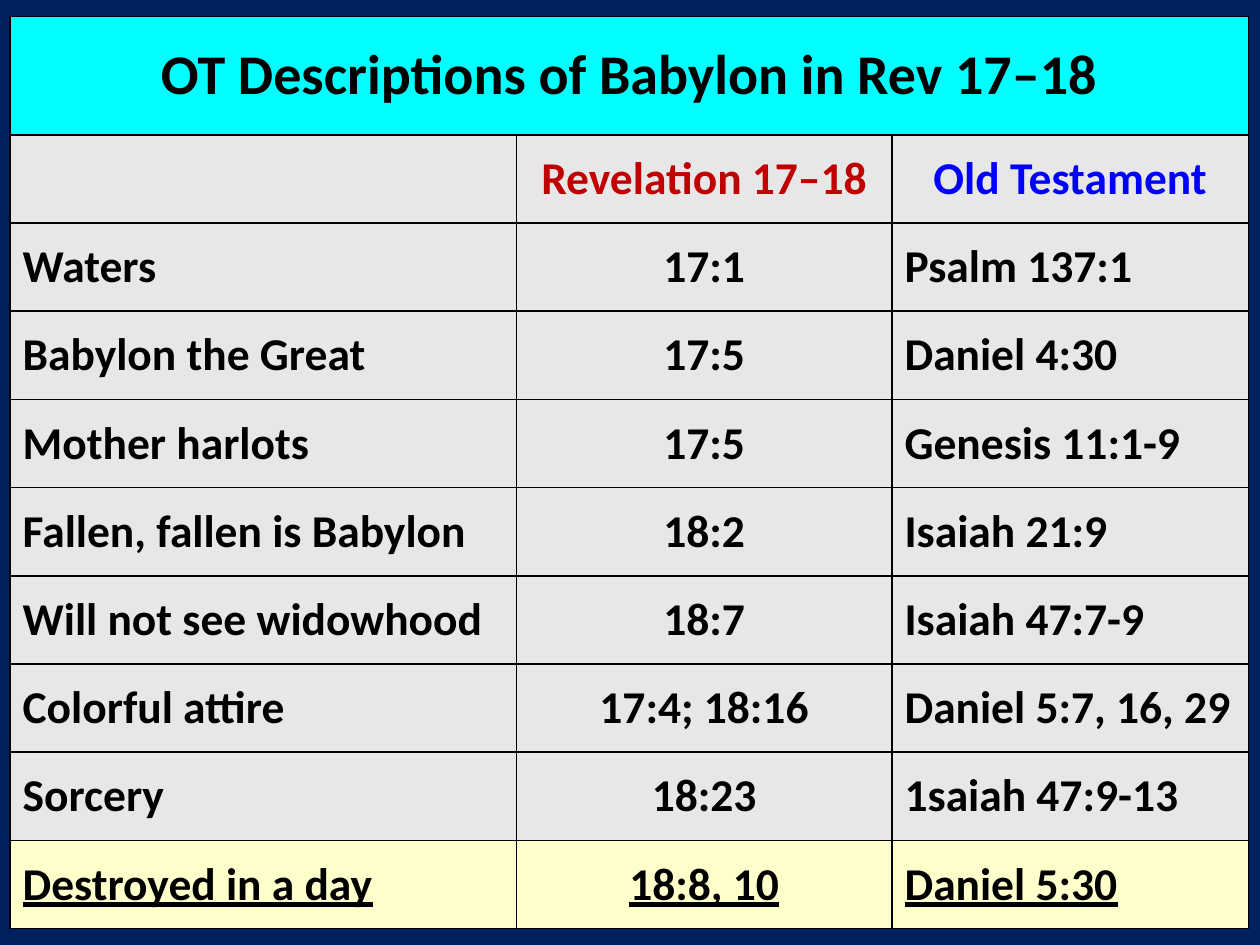
from lxml.etree import SubElement
from pptx import Presentation
from pptx.dml.color import RGBColor as RGB
from pptx.enum.text import MSO_ANCHOR as Anchor, PP_ALIGN as Align
from pptx.oxml.ns import qn
from pptx.util import Inches, Pt

COLORS = {
    "navy": "002060", "cyan": "00FFFF", "gray": "E7E7E7", "cream": "FFFFCC",
    "black": "000000", "red": "C00000", "blue": "0000FF",
}
TITLE = "OT Descriptions of Babylon in Rev 17–18"
HEADS = [("Revelation 17–18", "red"), ("Old Testament", "blue")]
VERSES = [
    ("Waters", "17:1", "Psalm 137:1"),
    ("Babylon the Great", "17:5", "Daniel 4:30"),
    ("Mother harlots", "17:5", "Genesis 11:1-9"),
    ("Fallen, fallen is Babylon", "18:2", "Isaiah 21:9"),
    ("Will not see widowhood", "18:7", "Isaiah 47:7-9"),
    ("Colorful attire", "17:4; 18:16", "Daniel 5:7, 16, 29"),
    ("Sorcery", "18:23", "1saiah 47:9-13"),
    ("Destroyed in a day", "18:8, 10", "Daniel 5:30"),
]
ALIGNS = (Align.LEFT, Align.CENTER, Align.LEFT)
# The slide is a grid of 100 columns by 75 rows.
COLS, ROWS = 100, 75
WIDTHS = [40.2, 29.8, 28.3]
HEIGHTS = [9.4] + [7] * (len(VERSES) + 1)


class Deck:
    font = "Calibri"
    size = 26

    def __init__(self, width, height):
        self.prs = Presentation()
        self.prs.slide_width, self.prs.slide_height = width, height
        self.slide = self.prs.slides.add_slide(self.prs.slide_layouts[6])

    def x(self, cols):
        return round(self.prs.slide_width * cols / COLS)

    def y(self, rows):
        return round(self.prs.slide_height * rows / ROWS)

    def color(self, name):
        return RGB.from_string(COLORS[name])

    def back(self, name):
        fill = self.slide.background.fill
        fill.solid()
        fill.fore_color.rgb = self.color(name)

    def table(self, left, top, widths, heights):
        frame = self.slide.shapes.add_table(
            len(heights), len(widths), self.x(left), self.y(top),
            self.x(sum(widths)), self.y(sum(heights)))
        table = frame.table
        table.first_row = table.horz_banding = False
        for col, width in zip(table.columns, widths):
            col.width = self.x(width)
        for row, height in zip(table.rows, heights):
            row.height = self.y(height)
        return table

    def border(self, cell, name="black", width=1):
        props = cell._tc.get_or_add_tcPr()
        for at, side in enumerate(("lnL", "lnR", "lnT", "lnB")):
            line = SubElement(props, qn(f"a:{side}"), w=str(Pt(width)))
            fill = SubElement(line, qn("a:solidFill"))
            SubElement(fill, qn("a:srgbClr"), val=COLORS[name])
            props.insert(at, line)

    def cell(self, cell, fill, text="", align=Align.CENTER, color="black",
             size=None, under=None):
        cell.fill.solid()
        cell.fill.fore_color.rgb = self.color(fill)
        self.border(cell)
        cell.vertical_anchor = Anchor.MIDDLE
        if not text:
            return
        cell.text = text
        para = cell.text_frame.paragraphs[0]
        para.alignment = align
        font = para.font
        font.name, font.size = self.font, Pt(size or self.size)
        font.bold, font.underline = True, under
        font.color.rgb = self.color(color)

    def save(self):
        self.prs.save("out.pptx")


def main():
    deck = Deck(Inches(10), Inches(7.5))
    deck.back("navy")
    table = deck.table(0.8, 1.3, WIDTHS, HEIGHTS)

    table.cell(0, 0).merge(table.cell(0, 2))
    for col in range(3):
        deck.cell(table.cell(0, col), "cyan", "" if col else TITLE, size=32)

    for col, (text, color) in enumerate([("", "black")] + HEADS):
        deck.cell(table.cell(1, col), "gray", text, color=color)

    for row, verse in enumerate(VERSES, 2):
        last = verse is VERSES[-1]
        for col, (text, align) in enumerate(zip(verse, ALIGNS)):
            deck.cell(table.cell(row, col), "cream" if last else "gray",
                      text, align, under=last or None)
    deck.save()


if __name__ == "__main__":
    main()
